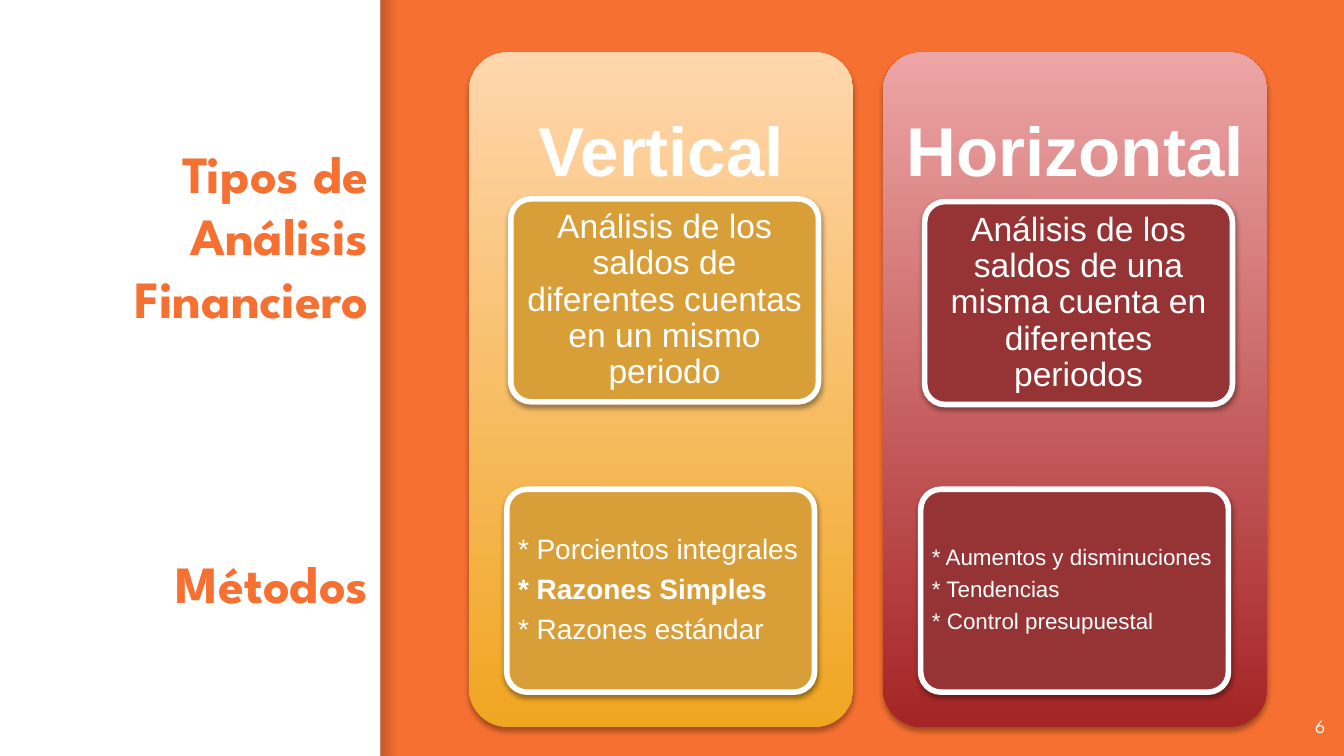
from dataclasses import dataclass

from lxml import etree
from pptx import Presentation
from pptx import util as u
from pptx.dml.color import RGBColor
from pptx.enum import shapes, text
from pptx.oxml import ns

ORANGE, WHITE = "F67031", "FFFFFF"
HEADING_FONT, BODY_FONT = "League Spartan", "Arial"
LEFT, CENTER, RIGHT = text.PP_ALIGN.LEFT, text.PP_ALIGN.CENTER, text.PP_ALIGN.RIGHT
MIDDLE, BOTTOM = text.MSO_ANCHOR.MIDDLE, text.MSO_ANCHOR.BOTTOM
SLIDE_WIDTH = 10
SLIDE_HEIGHT = SLIDE_WIDTH * 9 / 16
PANEL_TOP, PANEL_WIDTH, PANEL_HEIGHT = 0.39, 2.86, 5.02
CARD_WIDTH, CARD_HEIGHT = 2.29, 1.51
METHODS_TOP = 3.64


@dataclass
class Column:
    left: float
    heading: str
    bottom_color: str
    top_color: str
    card_color: str
    summary: str
    summary_top: float
    methods: list[str]
    methods_size: int
    bold_method: str = ""


COLUMNS = [
    Column(3.49, "Vertical", "F0A621", "FFD6AD", "D89F39",
           "Análisis de los saldos de diferentes cuentas en un mismo periodo", 1.48,
           ["* Porcientos integrales", "* Razones Simples", "* Razones estándar"],
           15, "* Razones Simples"),
    Column(6.57, "Horizontal", "A52425", "EDA5A5", "963334",
           "Análisis de los saldos de una misma cuenta en diferentes periodos", 1.5,
           ["* Aumentos y disminuciones", "* Tendencias", "* Control presupuestal"], 12),
]


def rgb(color: str) -> RGBColor:
    return RGBColor.from_string(color)


def place(shape, left: float, top: float, width: float, height: float) -> None:
    shape.left, shape.top = u.Inches(left), u.Inches(top)
    shape.width, shape.height = u.Inches(width), u.Inches(height)


def write(shape, lines: list[str], size: int, font: str, color: str, align,
          anchor=MIDDLE, inset: float = 0.1, bold: bool = False) -> None:
    frame = shape.text_frame
    frame.text = "\n".join(lines)
    frame.word_wrap = True
    frame.auto_size = text.MSO_AUTO_SIZE.NONE
    frame.vertical_anchor = anchor
    frame.margin_left = frame.margin_right = u.Inches(inset)
    frame.margin_top = frame.margin_bottom = u.Inches(inset)
    for para in frame.paragraphs:
        para.alignment = align
        for span in para.runs:
            span.font.size, span.font.name, span.font.bold = u.Pt(size), font, bold
            span.font.color.rgb = rgb(color)


def tighten(shape, size: int) -> None:
    for para in shape.text_frame.paragraphs:
        para.line_spacing = 0.9
        para.space_after = u.Pt(0.35 * size)


def add_box(slide, kind, left: float, top: float, width: float, height: float):
    box = slide.shapes.add_shape(kind, u.Inches(left), u.Inches(top),
                                 u.Inches(width), u.Inches(height))
    box.shadow.inherit = False
    box.line.fill.background()
    return box


def add_label(slide, left: float, top: float, width: float, height: float):
    return slide.shapes.add_textbox(u.Inches(left), u.Inches(top),
                                    u.Inches(width), u.Inches(height))


def fill_gradient(shape, colors: list[str], angle: float) -> None:
    shape.fill.gradient()
    shape.fill.gradient_angle = angle
    for stop, color in zip(shape.fill.gradient_stops, colors):
        stop.color.rgb = rgb(color)


def add_alpha(color_element, percent: int) -> None:
    etree.SubElement(color_element, ns.qn("a:alpha"), val=str(percent * 1000))


def drop_shadow(shape, percent: int, distance: float) -> None:
    effects = shape.element.spPr.find(ns.qn("a:effectLst"))
    shadow = etree.SubElement(effects, ns.qn("a:outerShdw"), blurRad=str(u.Pt(3.1)),
                              dist=str(u.Pt(distance)), dir="5400000", rotWithShape="0")
    add_alpha(etree.SubElement(shadow, ns.qn("a:srgbClr"), val="000000"), percent)


def add_card(slide, left: float, top: float, color: str, lines: list[str],
             size: int, align):
    card = add_box(slide, shapes.MSO_SHAPE.ROUNDED_RECTANGLE, left, top,
                   CARD_WIDTH, CARD_HEIGHT)
    card.adjustments[0] = 0.1
    card.fill.solid()
    card.fill.fore_color.rgb = rgb(color)
    card.line.color.rgb = rgb(WHITE)
    card.line.width = u.Pt(3)
    drop_shadow(card, 38, 1.6)
    write(card, lines, size, BODY_FONT, WHITE, align, inset=0.04)
    tighten(card, size)
    return card


def add_column(slide, column: Column) -> None:
    panel = add_box(slide, shapes.MSO_SHAPE.ROUNDED_RECTANGLE, column.left, PANEL_TOP,
                    PANEL_WIDTH, PANEL_HEIGHT)
    panel.adjustments[0] = 0.1
    fill_gradient(panel, [column.bottom_color, column.top_color], 90)
    drop_shadow(panel, 35, 1.8)

    heading = add_label(slide, column.left, PANEL_TOP, PANEL_WIDTH, 1.51)
    write(heading, [column.heading], 37, BODY_FONT, WHITE, CENTER, inset=0.15, bold=True)
    tighten(heading, 37)

    add_card(slide, column.left + 0.31, column.summary_top, column.card_color,
             [column.summary], 18, CENTER)
    methods = add_card(slide, column.left + 0.28, METHODS_TOP, column.card_color,
                       column.methods, column.methods_size, LEFT)
    for para in methods.text_frame.paragraphs:
        para.runs[0].font.bold = para.text == column.bold_method


def main() -> None:
    deck = Presentation()
    deck.slide_width, deck.slide_height = u.Inches(SLIDE_WIDTH), u.Inches(SLIDE_HEIGHT)
    slide = deck.slides.add_slide(deck.slide_layouts[5])
    slide.background.fill.solid()
    slide.background.fill.fore_color.rgb = rgb(ORANGE)

    # White side band with a soft shadow along its edge
    band = add_box(slide, shapes.MSO_SHAPE.RECTANGLE, -0.01, 0, 2.84, SLIDE_HEIGHT)
    band.fill.solid()
    band.fill.fore_color.rgb = rgb(WHITE)
    edge = add_box(slide, shapes.MSO_SHAPE.RECTANGLE, 2.83, 0, 0.12, SLIDE_HEIGHT)
    fill_gradient(edge, ["000014", "000014"], 0)
    for color_element, percent in zip(edge.element.spPr.iter(ns.qn("a:srgbClr")), (20, 0)):
        add_alpha(color_element, percent)

    # Title, moved in front of the band
    title = slide.shapes.title
    slide.shapes.element.append(title.element)
    place(title, 0.01, 0.46, 2.83, 2.09)
    write(title, ["Tipos de Análisis Financiero"], 28, HEADING_FONT, ORANGE, RIGHT,
          BOTTOM, bold=True)

    # Row label and page number
    methods_label = add_label(slide, 0.01, 4.09, 2.83, 0.58)
    write(methods_label, ["Métodos"], 28, HEADING_FONT, ORANGE, RIGHT, BOTTOM, bold=True)
    number = add_label(slide, 9.36, 5.19, 0.6, 0.43)
    write(number, ["6"], 10, HEADING_FONT, WHITE, RIGHT)

    # Columns of analysis types
    for column in COLUMNS:
        add_column(slide, column)

    deck.save("out.pptx")


if __name__ == "__main__":
    main()
